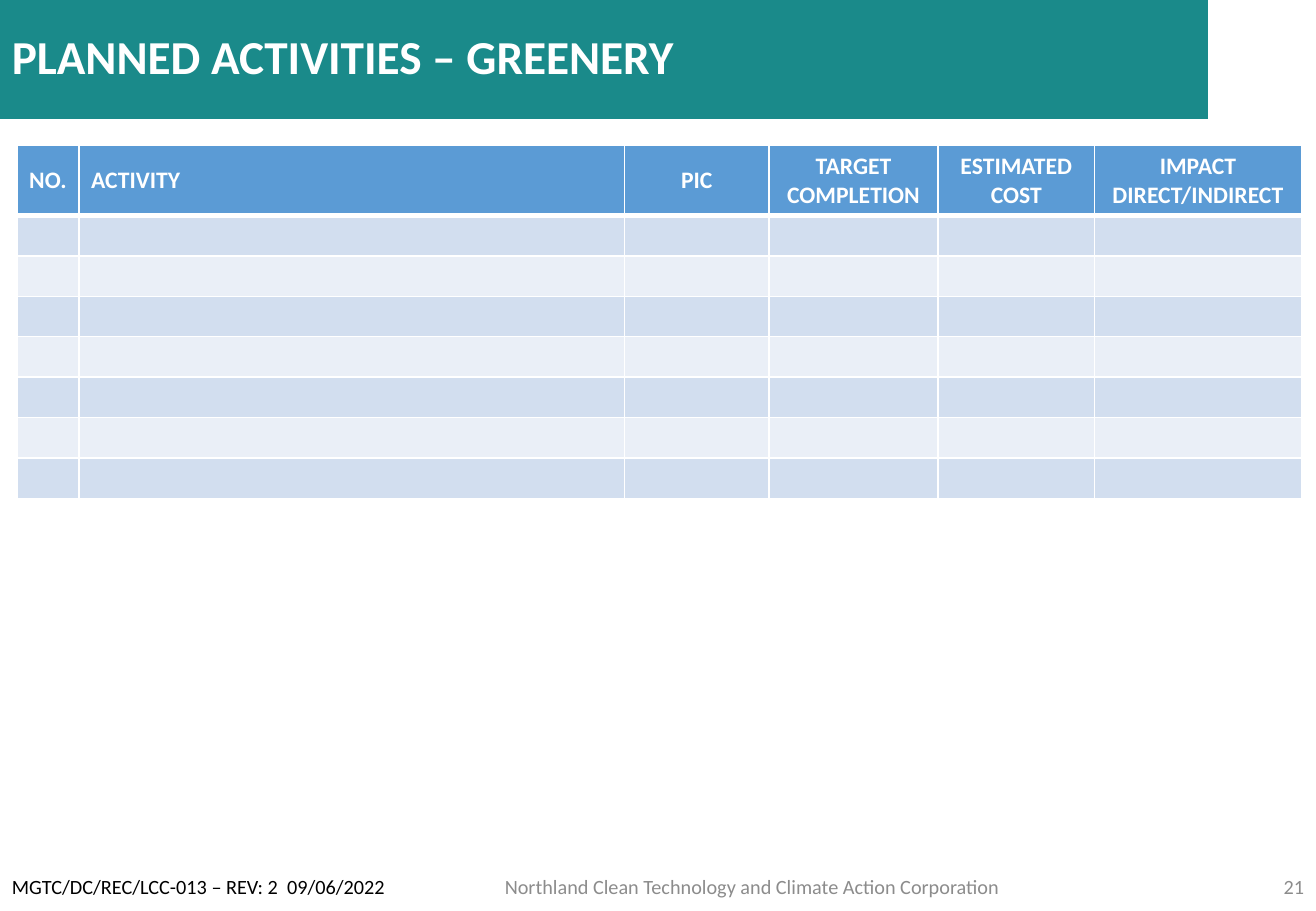
from lxml import etree
from pptx import Presentation
from pptx.dml.color import RGBColor
from pptx.enum.shapes import MSO_SHAPE
from pptx.enum.text import MSO_ANCHOR, PP_ALIGN
from pptx.oxml.ns import qn
from pptx.util import Inches, Pt

LEFT, CENTER, RIGHT = PP_ALIGN.LEFT, PP_ALIGN.CENTER, PP_ALIGN.RIGHT
MIDDLE = MSO_ANCHOR.MIDDLE
RECTANGLE = MSO_SHAPE.RECTANGLE

FONT = "Calibri"
WHITE, BLACK, GRAY = "FFFFFF", "000000", "8C8C8C"
TEAL, BLUE = "1A8A8A", "5B9BD5"
BANDS = ("D2DEEF", "EAEFF7")

# Heading, column width, alignment
COLUMNS = [
    ("NO.", 0.51, LEFT),
    ("ACTIVITY", 4.49, LEFT),
    ("PIC", 1.19, CENTER),
    ("TARGET COMPLETION", 1.39, CENTER),
    ("ESTIMATED COST", 1.29, CENTER),
    ("IMPACT\nDIRECT/INDIRECT", 1.7, CENTER),
]
BODY_ROWS = 7
HEADER_HEIGHT = 0.57


def rgb(value):
    return RGBColor.from_string(value)


def write(tf, text, size, color, align=LEFT, bold=False):
    p = tf.paragraphs[0]
    p.text = text
    p.alignment = align
    for r in p.runs:
        r.font.name = FONT
        r.font.size = Pt(size)
        r.font.bold = bold
        r.font.color.rgb = rgb(color)
    return p


def style_cell(cell, fill, bottom_width=1):
    cell.fill.solid()
    cell.fill.fore_color.rgb = rgb(fill)
    cell.vertical_anchor = MIDDLE
    tc_pr = cell._tc.get_or_add_tcPr()
    # Borders come before the fill
    sides = (("lnL", 1), ("lnR", 1), ("lnT", 1), ("lnB", bottom_width))
    for i, (side, width) in enumerate(sides):
        ln = etree.Element(qn(f"a:{side}"), w=str(Pt(width)))
        fill_el = etree.SubElement(ln, qn("a:solidFill"))
        etree.SubElement(fill_el, qn("a:srgbClr"), val=WHITE)
        tc_pr.insert(i, ln)


def add_title_bar(s, left, top, width, height):
    sp = s.shapes.add_shape(RECTANGLE, Inches(left), Inches(top),
                            Inches(width), Inches(height))
    sp.shadow.inherit = False
    sp.fill.solid()
    sp.fill.fore_color.rgb = rgb(TEAL)
    sp.line.fill.background()
    tf = sp.text_frame
    tf.word_wrap = True
    tf.vertical_anchor = MIDDLE
    p = write(tf, "PLANNED ACTIVITIES – GREENERY", 28, WHITE, bold=True)
    p.line_spacing = 0.9


def add_activity_table(s, left, top, width, height):
    table = s.shapes.add_table(BODY_ROWS + 1, len(COLUMNS), Inches(left),
                               Inches(top), Inches(width), Inches(height)).table
    row_height = (height - HEADER_HEIGHT) / BODY_ROWS
    for i, row in enumerate(table.rows):
        row.height = Inches(row_height if i else HEADER_HEIGHT)
    for col, (heading, col_width, align) in enumerate(COLUMNS):
        table.columns[col].width = Inches(col_width)
        # Header cell
        cell = table.cell(0, col)
        style_cell(cell, BLUE, bottom_width=3)
        write(cell.text_frame, heading, 14, WHITE, align, bold=True)
        # Empty banded cells, with a text size that fits the row
        for row in range(1, BODY_ROWS + 1):
            cell = table.cell(row, col)
            style_cell(cell, BANDS[(row - 1) % 2])
            p = cell.text_frame.paragraphs[0]
            etree.SubElement(p._p, qn("a:endParaRPr"), sz="1200")


def add_footer(s, left, top, width, height):
    # Offset, width, text, colour, alignment
    parts = [
        (2.44, 7.5, "Northland Clean Technology and Climate Action Corporation",
         GRAY, CENTER),
        (width - 0.89, 0.89, "21", GRAY, RIGHT),
        (0, 3.49, "MGTC/DC/REC/LCC-013 – REV: 2  09/06/2022", BLACK, LEFT),
    ]
    for offset, part_width, text, color, align in parts:
        sp = s.shapes.add_textbox(Inches(left + offset), Inches(top),
                                  Inches(part_width), Inches(height))
        tf = sp.text_frame
        tf.word_wrap = True
        tf.vertical_anchor = MIDDLE
        write(tf, text, 12, color, align)


def main():
    prs = Presentation()
    prs.slide_width, prs.slide_height = Inches(10.83), Inches(7.5)
    s = prs.slides.add_slide(prs.slide_layouts[6])
    add_title_bar(s, 0, 0, 9.94, 0.98)
    add_activity_table(s, 0.14, 1.2, 10.57, 2.9)
    add_footer(s, 0, 7.1, 10.83, 0.4)
    prs.save("out.pptx")


if __name__ == "__main__":
    main()
